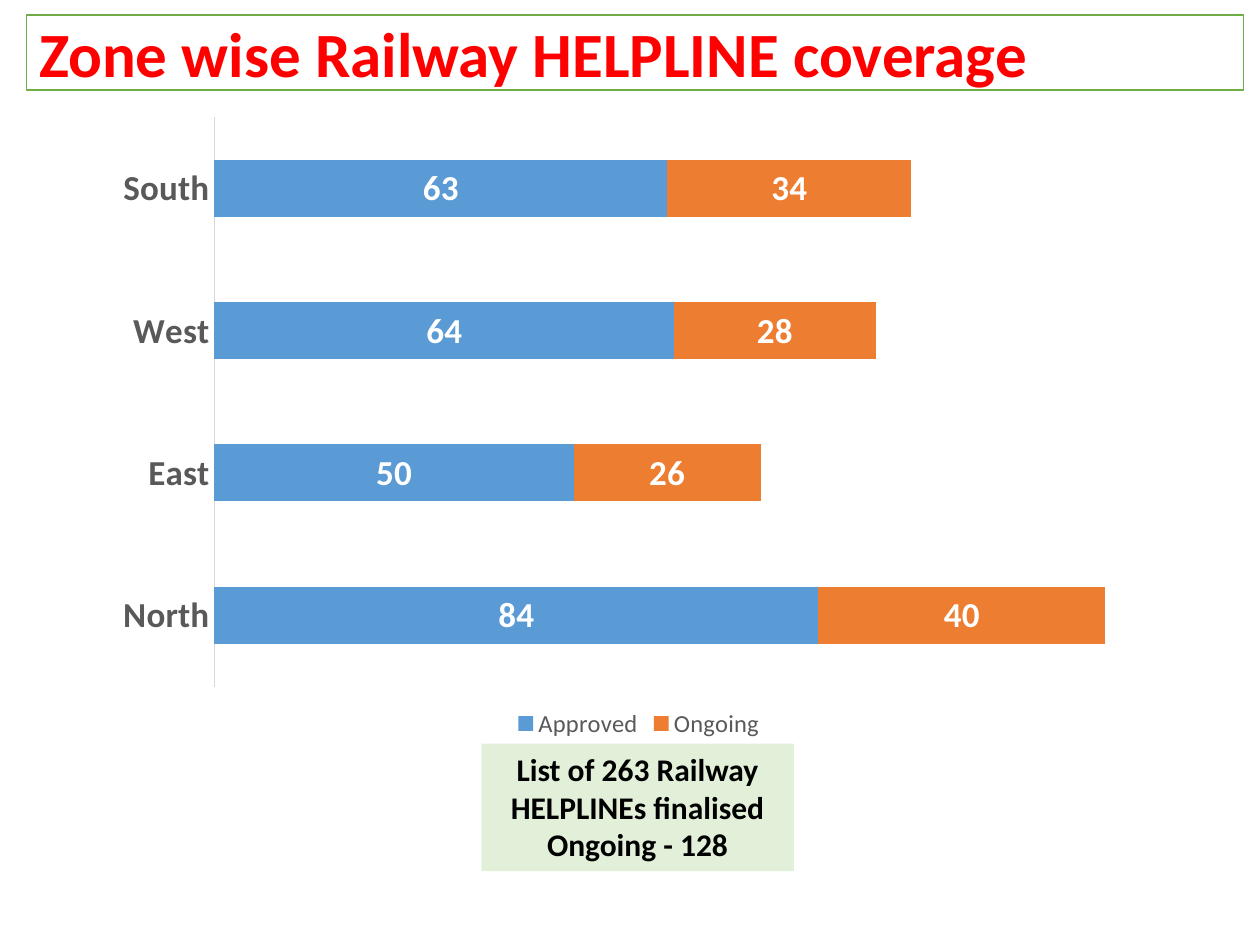
"""Build a slide with a stacked bar chart of railway helpline coverage by zone."""
from dataclasses import dataclass

from lxml import etree
from pptx import Presentation
from pptx.chart.data import CategoryChartData
from pptx.dml.color import RGBColor
from pptx.enum.chart import XL_CHART_TYPE, XL_LABEL_POSITION, XL_LEGEND_POSITION, XL_TICK_MARK
from pptx.enum.shapes import MSO_SHAPE
from pptx.enum.text import MSO_ANCHOR, MSO_AUTO_SIZE, PP_ALIGN
from pptx.oxml.ns import qn
from pptx.util import Inches, Pt

BAR_STACKED = XL_CHART_TYPE.BAR_STACKED
LABEL_CENTER = XL_LABEL_POSITION.CENTER
LEGEND_BOTTOM = XL_LEGEND_POSITION.BOTTOM
NO_TICK = XL_TICK_MARK.NONE
RECTANGLE = MSO_SHAPE.RECTANGLE
MIDDLE, TOP = MSO_ANCHOR.MIDDLE, MSO_ANCHOR.TOP
NO_FIT = MSO_AUTO_SIZE.NONE
LEFT, CENTER = PP_ALIGN.LEFT, PP_ALIGN.CENTER

TITLE = "Zone wise Railway HELPLINE coverage"
NOTE = ["List of 263 Railway HELPLINEs finalised", "Ongoing - 128"]
ZONES = ["North", "East", "West", "South"]
SERIES = {"Approved": [84, 50, 64, 63], "Ongoing": [40, 26, 28, 34]}

WIDTH, HEIGHT = Inches(10), Inches(7.5)
TITLE_BOX = (0.021, 0.016, 0.966, 0.079)
CHART_BOX = (0.026, 0.117, 0.962, 0.67)
NOTE_BOX = (0.382, 0.787, 0.248, 0.135)
PLOT_SHARES = {"x": 0.15, "y": 0.01, "w": 0.83, "h": 0.9}
AXIS_MAXIMUM = 140


@dataclass(frozen=True)
class Theme:
    """Colours and type sizes of the slide."""
    font: str = "Calibri"
    white: str = "FFFFFF"
    black: str = "000000"
    title: str = "FF0000"
    border: str = "70AD47"
    note: str = "E2F0D9"
    grey: str = "595959"
    axis: str = "D9D9D9"
    bars: tuple = ("5B9BD5", "ED7D31")
    title_size: int = 36
    label_size: int = 20
    note_size: int = 18
    legend_size: int = 14


THEME = Theme()


def color(value):
    """Return the colour for a hexadecimal value."""
    return RGBColor.from_string(value)


def style_font(font, size, value, bold=True):
    """Apply the theme font with a size, colour and weight."""
    font.name, font.size, font.bold = THEME.font, Pt(size), bold
    font.color.rgb = color(value)


def place(box):
    """Turn shares of the slide into left, top, width and height."""
    return [round(share * side) for share, side in zip(box, (WIDTH, HEIGHT) * 2)]


def fill_solid(target, value):
    """Give a shape or series a solid fill."""
    target.fill.solid()
    target.fill.fore_color.rgb = color(value)


def write_text(shape, lines, size, value, alignment, anchor):
    """Write and format paragraphs in a shape."""
    frame = shape.text_frame
    frame.text = "\n".join(lines)
    frame.word_wrap, frame.auto_size, frame.vertical_anchor = True, NO_FIT, anchor
    for paragraph in frame.paragraphs:
        paragraph.alignment = alignment
        for run in paragraph.runs:
            style_font(run.font, size, value)


def add_title(slide):
    """Move and format the title placeholder."""
    title = slide.shapes.title
    title.left, title.top, title.width, title.height = place(TITLE_BOX)
    fill_solid(title, THEME.white)
    title.line.color.rgb = color(THEME.border)
    title.line.width = Pt(1)
    write_text(title, [TITLE], THEME.title_size, THEME.title, LEFT, MIDDLE)


def add_note(slide):
    """Add the summary box under the chart."""
    note = slide.shapes.add_shape(RECTANGLE, *place(NOTE_BOX))
    note.shadow.inherit = False
    fill_solid(note, THEME.note)
    note.line.fill.background()
    write_text(note, NOTE, THEME.note_size, THEME.black, CENTER, TOP)


def set_plot_layout(chart):
    """Fix the inner plot area as shares of the chart."""
    area = chart._chartSpace.find(".//" + qn("c:plotArea"))
    for layout in area.findall(qn("c:layout")):
        area.remove(layout)
    layout = etree.Element(qn("c:layout"))
    area.insert(0, layout)
    manual = etree.SubElement(layout, qn("c:manualLayout"))
    settings = {"layoutTarget": "inner", "xMode": "edge", "yMode": "edge", **PLOT_SHARES}
    for name, value in settings.items():
        etree.SubElement(manual, qn(f"c:{name}")).set("val", str(value))


def add_zone_chart(slide):
    """Add the stacked bars with labels, axes and legend."""
    data = CategoryChartData()
    data.categories = ZONES
    for name, values in SERIES.items():
        data.add_series(name, values)
    chart = slide.shapes.add_chart(BAR_STACKED, *place(CHART_BOX), data).chart
    style_font(chart.font, 10, THEME.black, False)
    chart.has_title = False
    set_plot_layout(chart)

    plot = chart.plots[0]
    plot.gap_width, plot.overlap, plot.vary_by_categories = 150, 100, False
    for series, value in zip(plot.series, THEME.bars):
        fill_solid(series.format, value)
        labels = series.data_labels
        labels.show_value, labels.position = True, LABEL_CENTER
        style_font(labels.font, THEME.label_size, THEME.white)

    zones = chart.category_axis
    zones.major_tick_mark = zones.minor_tick_mark = NO_TICK
    zones.has_major_gridlines = False
    zones.format.line.color.rgb = color(THEME.axis)
    zones.format.line.width = Pt(0.75)
    style_font(zones.tick_labels.font, THEME.label_size, THEME.grey)
    counts = chart.value_axis
    counts.minimum_scale, counts.maximum_scale = 0, AXIS_MAXIMUM
    counts.has_major_gridlines = counts.visible = False

    chart.has_legend = True
    chart.legend.position, chart.legend.include_in_layout = LEGEND_BOTTOM, False
    style_font(chart.legend.font, THEME.legend_size, THEME.grey, False)


def main():
    """Create and save the presentation."""
    presentation = Presentation()
    presentation.slide_width, presentation.slide_height = WIDTH, HEIGHT
    slide = presentation.slides.add_slide(presentation.slide_layouts[5])
    add_title(slide)
    add_note(slide)
    add_zone_chart(slide)
    presentation.save("out.pptx")


if __name__ == "__main__":
    main()
